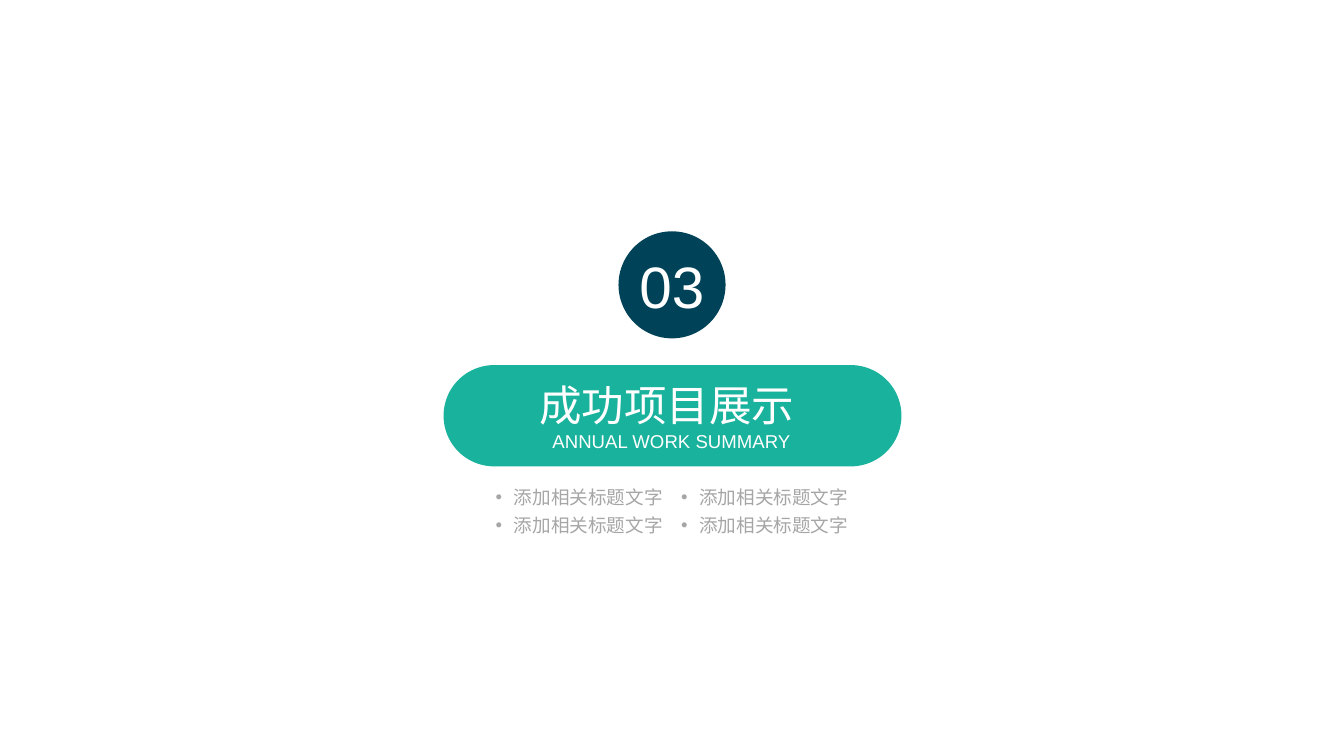
from lxml import etree
from pptx import Presentation
from pptx import util as u
from pptx.dml.color import RGBColor
from pptx.enum import shapes, text
from pptx.oxml.ns import qn

WHITE, GREY, TEAL, NAVY = "FFFFFF", "A6A6A6", "18B29D", "004358"


def set_frame(shape, anchor, wrap=True):
    """Remove insets, fix the size and centre the first paragraph."""
    frame = shape.text_frame
    frame.margin_left = frame.margin_right = 0
    frame.margin_top = frame.margin_bottom = 0
    frame.auto_size = text.MSO_AUTO_SIZE.NONE
    frame.word_wrap = wrap
    frame.vertical_anchor = anchor
    para = frame.paragraphs[0]
    para.alignment = text.PP_ALIGN.CENTER
    para.space_before = u.Pt(0)
    return para


def add_span(para, words, size, color):
    span = para.add_run()
    span.text = words
    span.font.name = "Arial"
    span.font.size = u.Pt(size)
    span.font.bold = False
    span.font.color.rgb = RGBColor.from_string(color)


deck = Presentation()
deck.slide_width, deck.slide_height = u.Inches(14.06), u.Inches(7.91)

# The comparison layout has a title and four body placeholders
page = deck.slides.add_slide(deck.slide_layouts[4])
title, *bullets = page.placeholders

# Title band and number circle
band = page.shapes.add_shape(
    shapes.MSO_SHAPE.ROUNDED_RECTANGLE,
    u.Inches(4.64), u.Inches(3.82), u.Inches(4.79), u.Inches(1.06))
band.adjustments[0] = 0.5
circle = page.shapes.add_shape(
    shapes.MSO_SHAPE.OVAL,
    u.Inches(6.47), u.Inches(2.42), u.Inches(1.12), u.Inches(1.12))
for shape, color in ((band, TEAL), (circle, NAVY)):
    shape.shadow.inherit = False
    shape.fill.solid()
    shape.fill.fore_color.rgb = RGBColor.from_string(color)
    shape.line.fill.background()
add_span(set_frame(circle, text.MSO_ANCHOR.MIDDLE), "03", 44, WHITE)

# Section title, brought in front of the band
title.left, title.top = u.Inches(5.64), u.Inches(3.96)
title.width, title.height = u.Inches(2.77), u.Inches(0.77)
title.element.getparent().append(title.element)
para = set_frame(title, text.MSO_ANCHOR.MIDDLE)
add_span(para, "成功项目展示 ", 32, WHITE)
para.add_line_break()
add_span(para, "ANNUAL WORK SUMMARY", 14, WHITE)

# Two by two grid of bullets
for i, box in enumerate(bullets):
    row, column = divmod(i, 2)
    box.left = u.Inches(5.18 + 1.94 * column)
    box.top = u.Inches(5.08 + 0.3 * row)
    box.width, box.height = u.Inches(1.76), u.Inches(0.24)
    para = set_frame(box, text.MSO_ANCHOR.TOP, wrap=False)
    props = para._p.get_or_add_pPr()
    props.set("marL", str(u.Inches(0.19)))
    props.set("indent", str(-u.Inches(0.19)))
    etree.SubElement(props, qn("a:buFont")).set("typeface", "Arial")
    etree.SubElement(props, qn("a:buChar")).set("char", "•")
    add_span(para, "添加相关标题文字", 14, GREY)

deck.save("out.pptx")
